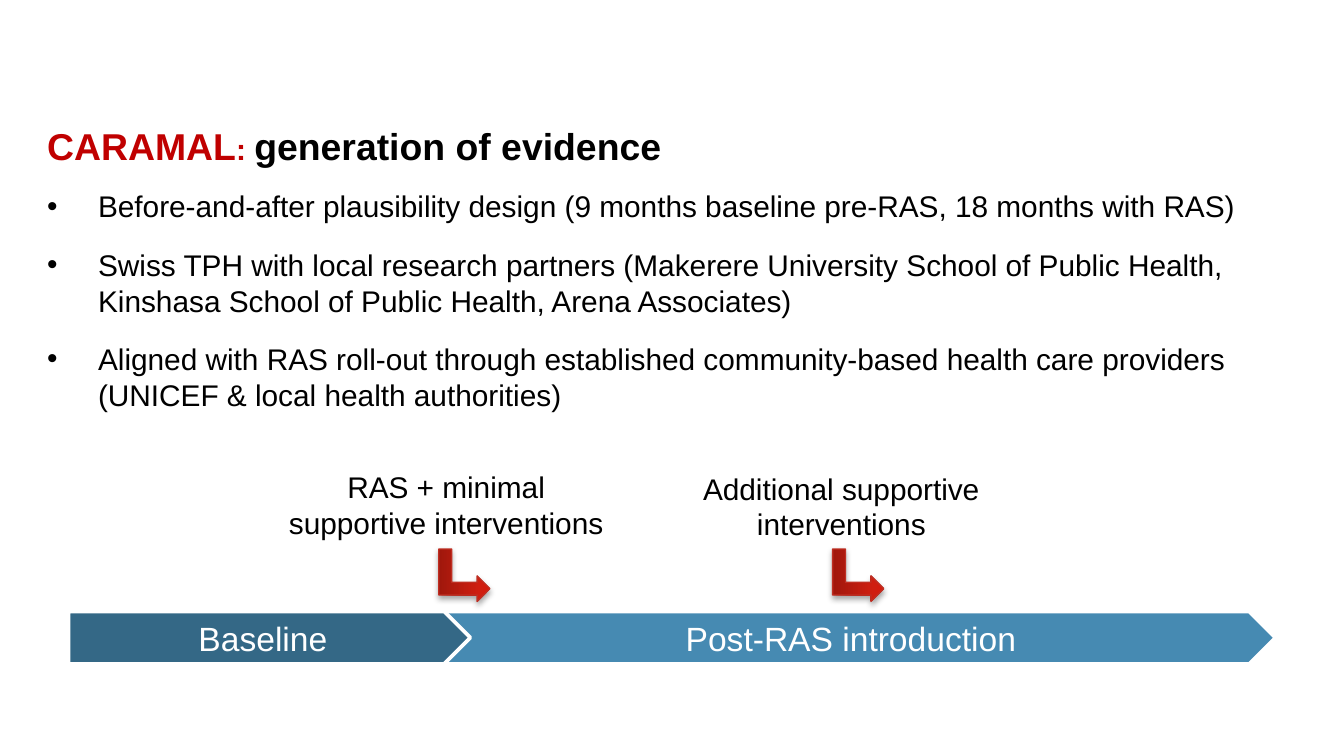
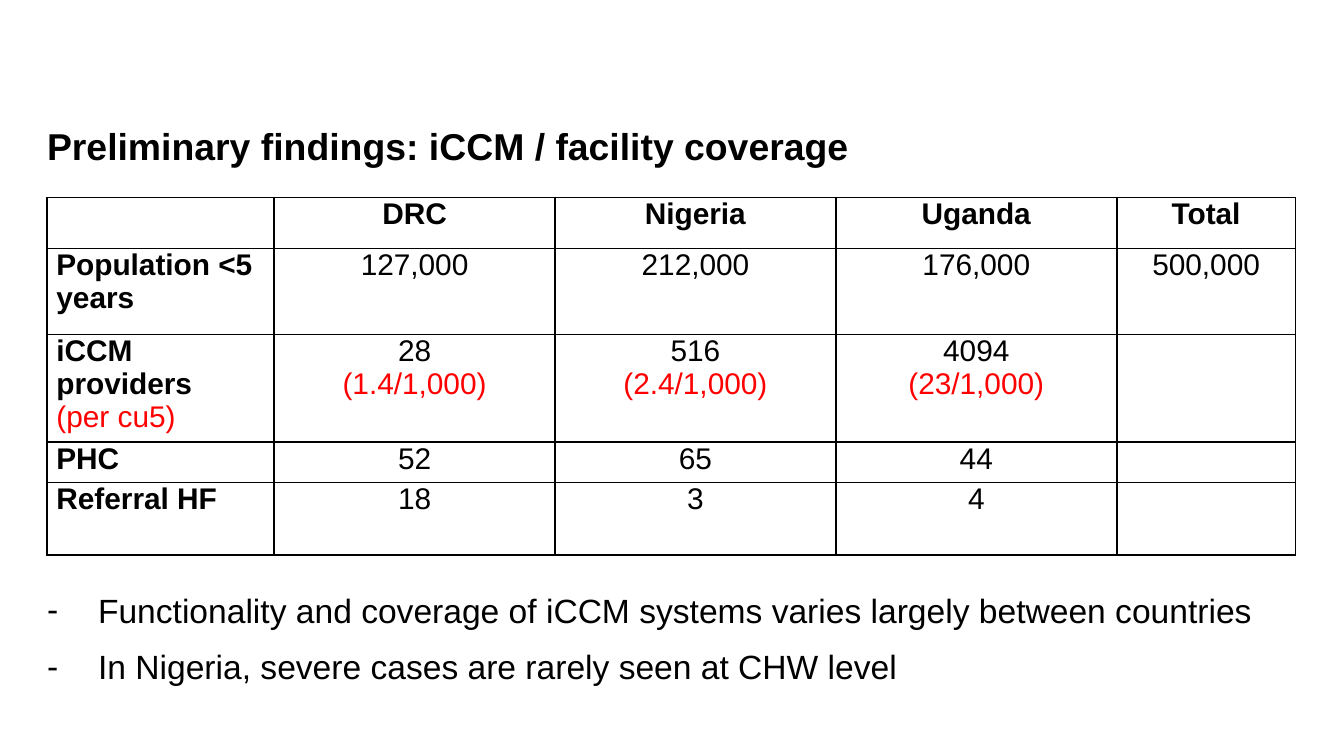
from dataclasses import dataclass

from lxml.etree import SubElement
from pptx import Presentation
from pptx.dml.color import RGBColor
from pptx.enum.shapes import MSO_SHAPE
from pptx.enum.text import MSO_ANCHOR, MSO_AUTO_SIZE, PP_ALIGN
from pptx.oxml import parse_xml
from pptx.oxml.ns import nsdecls, qn
from pptx.shapes.autoshape import Shape
from pptx.slide import Slide
from pptx.table import _Cell
from pptx.text.text import TextFrame, _Paragraph
from pptx.util import Inches, Pt

FONT = "Arial"
BLACK = RGBColor(0x00, 0x00, 0x00)
WHITE = RGBColor(0xFF, 0xFF, 0xFF)
TITLE_RED = RGBColor(0xC0, 0x00, 0x00)
RATE_RED = RGBColor(0xFF, 0x00, 0x00)
DARK_BLUE = RGBColor(0x34, 0x68, 0x86)
LIGHT_BLUE = RGBColor(0x46, 0x8A, 0xB2)
ARROW_EDGE = RGBColor(0xBF, 0x2E, 0x22)
ARROW_STOPS = (
    (0, RGBColor(0xA0, 0x17, 0x0C)),
    (80, RGBColor(0xCF, 0x1E, 0x10)),
    (100, RGBColor(0xD4, 0x1B, 0x0C)),
)
SLIDE_WIDTH = Inches(10)
SLIDE_HEIGHT = SLIDE_WIDTH * 9 // 16
LEFT = 0.35
TEXT_WIDTH = 9.21


@dataclass(frozen=True)
class TitlePart:
    text: str
    color: RGBColor = BLACK
    small_caps: bool = False


@dataclass(frozen=True)
class Phase:
    text: str
    left: float
    width: float
    color: RGBColor


@dataclass(frozen=True)
class Intervention:
    text: str
    label_left: float
    label_top: float
    arrow_left: float


@dataclass(frozen=True)
class Bullet:
    text: str
    space_after: float = 8.6


@dataclass(frozen=True)
class Row:
    height: float
    name: str
    values: tuple[str, ...]
    name_note: str = ""
    notes: tuple[str, ...] = ()


TITLES = (
    (
        TitlePart("C", TITLE_RED),
        TitlePart("ARAMAL: ", TITLE_RED, True),
        TitlePart("generation of evidence"),
    ),
    (TitlePart("Preliminary findings: iCCM / facility coverage"),),
)
DESIGN_POINTS = (
    Bullet("Before-and-after plausibility design (9 months baseline pre-RAS, 18 months with RAS)", 12),
    Bullet(
        "Swiss TPH with local research partners (Makerere University School of Public Health, "
        "Kinshasa School of Public Health, Arena Associates)",
        12,
    ),
    Bullet(
        "Aligned with RAS roll-out through established community-based health care providers "
        "(UNICEF & local health authorities)"
    ),
)
FINDINGS = (
    Bullet("Functionality and coverage of iCCM systems varies largely between countries"),
    Bullet("In Nigeria, severe cases are rarely seen at CHW level"),
)
POST_RAS = Phase("Post-RAS introduction", 3.27, 6.22, LIGHT_BLUE)
BASELINE = Phase("Baseline", 0.51, 2.99, DARK_BLUE)
INTERVENTIONS = (
    Intervention("RAS + minimal supportive interventions", 1.98, 3.44, 3.26),
    Intervention("Additional supportive interventions", 4.92, 3.45, 6.19),
)
COLUMN_WIDTHS = (1.69, 2.09, 2.09, 2.09, 1.33)
TABLE_HEIGHT = 2.66
COVERAGE = (
    Row(0.38, "", ("DRC", "Nigeria", "Uganda", "Total")),
    Row(0.64, "Population <5 years", ("127,000", "212,000", "176,000", "500,000")),
    Row(
        0.47,
        "iCCM providers",
        ("28", "516", "4094", ""),
        "(per cu5)",
        ("(1.4/1,000)", "(2.4/1,000)", "(23/1,000)", ""),
    ),
    Row(0.3, "PHC", ("52", "65", "44", "")),
    Row(0.54, "Referral HF", ("18", "3", "4", "")),
)


def set_font(para: _Paragraph, size: float, color: RGBColor = BLACK, bold: bool = False) -> None:
    para.font.name = FONT
    para.font.size = Pt(size)
    para.font.bold = bold
    para.font.color.rgb = color


def add_text_frame(page: Slide, top: float, width: float, height: float) -> TextFrame:
    box = page.shapes.add_textbox(Inches(LEFT), Inches(top), Inches(width), Inches(height))
    frame = box.text_frame
    frame.word_wrap = True
    frame.margin_left = frame.margin_right = frame.margin_top = frame.margin_bottom = 0
    return frame


def add_title(page: Slide, parts: tuple[TitlePart, ...]) -> None:
    para = add_text_frame(page, 0.92, 9.12, 0.3).paragraphs[0]
    set_font(para, 20, bold=True)
    for part in parts:
        span = para.add_run()
        span.text = part.text
        span.font.color.rgb = part.color
        if part.small_caps:
            span.font._element.set("cap", "small")


def add_bullets(
    page: Slide, bullets: tuple[Bullet, ...], top: float, height: float, mark: str, size: float
) -> None:
    frame = add_text_frame(page, top, TEXT_WIDTH, height)
    for index, bullet in enumerate(bullets):
        para = frame.add_paragraph() if index else frame.paragraphs[0]
        para.text = bullet.text
        properties = para._p.get_or_add_pPr()
        properties.set("marL", str(Inches(0.38)))
        properties.set("indent", str(-Inches(0.38)))
        SubElement(properties, qn("a:buFont"), typeface=FONT)
        SubElement(properties, qn("a:buChar"), char=mark)
        para.space_after = Pt(bullet.space_after)
        set_font(para, size)


def add_shape(
    page: Slide, kind: MSO_SHAPE, left: float, top: float, width: float, height: float
) -> Shape:
    shape = page.shapes.add_shape(kind, Inches(left), Inches(top), Inches(width), Inches(height))
    shape.shadow.inherit = False
    return shape


def write_centred(shape: Shape, text: str, size: float, color: RGBColor) -> None:
    shape.text_frame.word_wrap = True
    para = shape.text_frame.paragraphs[0]
    para.text = text
    para.alignment = PP_ALIGN.CENTER
    set_font(para, size, color)


def set_line(shape: Shape, color: RGBColor, width: float) -> None:
    shape.line.color.rgb = color
    shape.line.width = Pt(width)


def add_phase(page: Slide, phase: Phase) -> None:
    shape = add_shape(page, MSO_SHAPE.PENTAGON, phase.left, 4.55, phase.width, 0.39)
    shape.fill.solid()
    shape.fill.fore_color.rgb = phase.color
    set_line(shape, WHITE, 2)
    shape.text_frame.vertical_anchor = MSO_ANCHOR.MIDDLE
    write_centred(shape, phase.text, 18, WHITE)


def add_label(page: Slide, item: Intervention) -> None:
    label = add_shape(page, MSO_SHAPE.RECTANGLE, item.label_left, item.label_top, 2.68, 0.64)
    label.fill.background()
    set_line(label, WHITE, 0.75)
    label.text_frame.vertical_anchor = MSO_ANCHOR.TOP
    label.text_frame.auto_size = MSO_AUTO_SIZE.SHAPE_TO_FIT_TEXT
    write_centred(label, item.text, 16, BLACK)


def add_bent_arrow(page: Slide, item: Intervention) -> None:
    arrow = add_shape(page, MSO_SHAPE.BENT_UP_ARROW, item.arrow_left, 4.09, 0.39, 0.38)
    arrow.rotation = 90
    set_line(arrow, ARROW_EDGE, 0.75)
    stops = "".join(
        f'<a:gs pos="{position * 1000}"><a:srgbClr val="{color}"/></a:gs>'
        for position, color in ARROW_STOPS
    )
    gradient = parse_xml(
        f'<a:gradFill {nsdecls("a")} rotWithShape="1"><a:gsLst>{stops}</a:gsLst>'
        '<a:lin ang="16200000" scaled="0"/></a:gradFill>'
    )
    properties = arrow._element.spPr
    properties.find(qn("a:prstGeom")).addnext(gradient)
    shadow = parse_xml(
        f'<a:outerShdw {nsdecls("a")} blurRad="{Pt(3.1)}" dist="{Pt(1.8)}" dir="5400000" '
        'rotWithShape="0"><a:srgbClr val="000000"><a:alpha val="35000"/></a:srgbClr></a:outerShdw>'
    )
    properties.find(qn("a:effectLst")).append(shadow)


def style_cell(cell: _Cell) -> None:
    cell.margin_left = cell.margin_right = Inches(0.07)
    cell.margin_top = cell.margin_bottom = 0
    cell.fill.background()
    properties = cell._tc.get_or_add_tcPr()
    for index, side in enumerate(("lnL", "lnR", "lnT", "lnB")):
        border = parse_xml(
            f'<a:{side} {nsdecls("a")} w="{Pt(1)}"><a:solidFill><a:srgbClr val="{BLACK}"/>'
            f"</a:solidFill></a:{side}>"
        )
        properties.insert(index, border)


def fill_cell(cell: _Cell, text: str, note: str, bold: bool, align: PP_ALIGN) -> None:
    style_cell(cell)
    para = cell.text_frame.paragraphs[0]
    para.text = text
    para.alignment = align
    set_font(para, 16, bold=bold)
    if note:
        para = cell.text_frame.add_paragraph()
        para.text = note
        para.alignment = align
        set_font(para, 16, RATE_RED)


def add_coverage_table(page: Slide) -> None:
    holder = page.shapes.add_table(
        len(COVERAGE),
        len(COLUMN_WIDTHS),
        Inches(LEFT),
        Inches(1.47),
        Inches(sum(COLUMN_WIDTHS)),
        Inches(TABLE_HEIGHT),
    )
    table = holder.table
    table.first_row = table.horz_banding = False
    for column, width in zip(table.columns, COLUMN_WIDTHS):
        column.width = Inches(width)
    for row_index, row in enumerate(COVERAGE):
        table.rows[row_index].height = Inches(row.height)
        fill_cell(table.cell(row_index, 0), row.name, row.name_note, True, PP_ALIGN.LEFT)
        notes = row.notes or ("",) * len(row.values)
        for column_index, (value, note) in enumerate(zip(row.values, notes), 1):
            cell = table.cell(row_index, column_index)
            fill_cell(cell, value, note, row_index == 0, PP_ALIGN.CENTER)
    holder.height = Inches(TABLE_HEIGHT)


def main() -> None:
    deck = Presentation()
    deck.slide_width, deck.slide_height = SLIDE_WIDTH, SLIDE_HEIGHT
    evidence, coverage = (deck.slides.add_slide(deck.slide_layouts[6]) for _ in TITLES)
    for page, parts in zip((evidence, coverage), TITLES):
        add_title(page, parts)

    add_phase(evidence, POST_RAS)
    add_bullets(evidence, DESIGN_POINTS, 1.4, 2.05, "•", 16)
    add_phase(evidence, BASELINE)
    for item in INTERVENTIONS:
        add_label(evidence, item)
    for item in INTERVENTIONS:
        add_bent_arrow(evidence, item)

    add_coverage_table(coverage)
    add_bullets(coverage, FINDINGS, 4.39, 0.67, "-", 18)
    deck.save("out.pptx")


if __name__ == "__main__":
    main()
